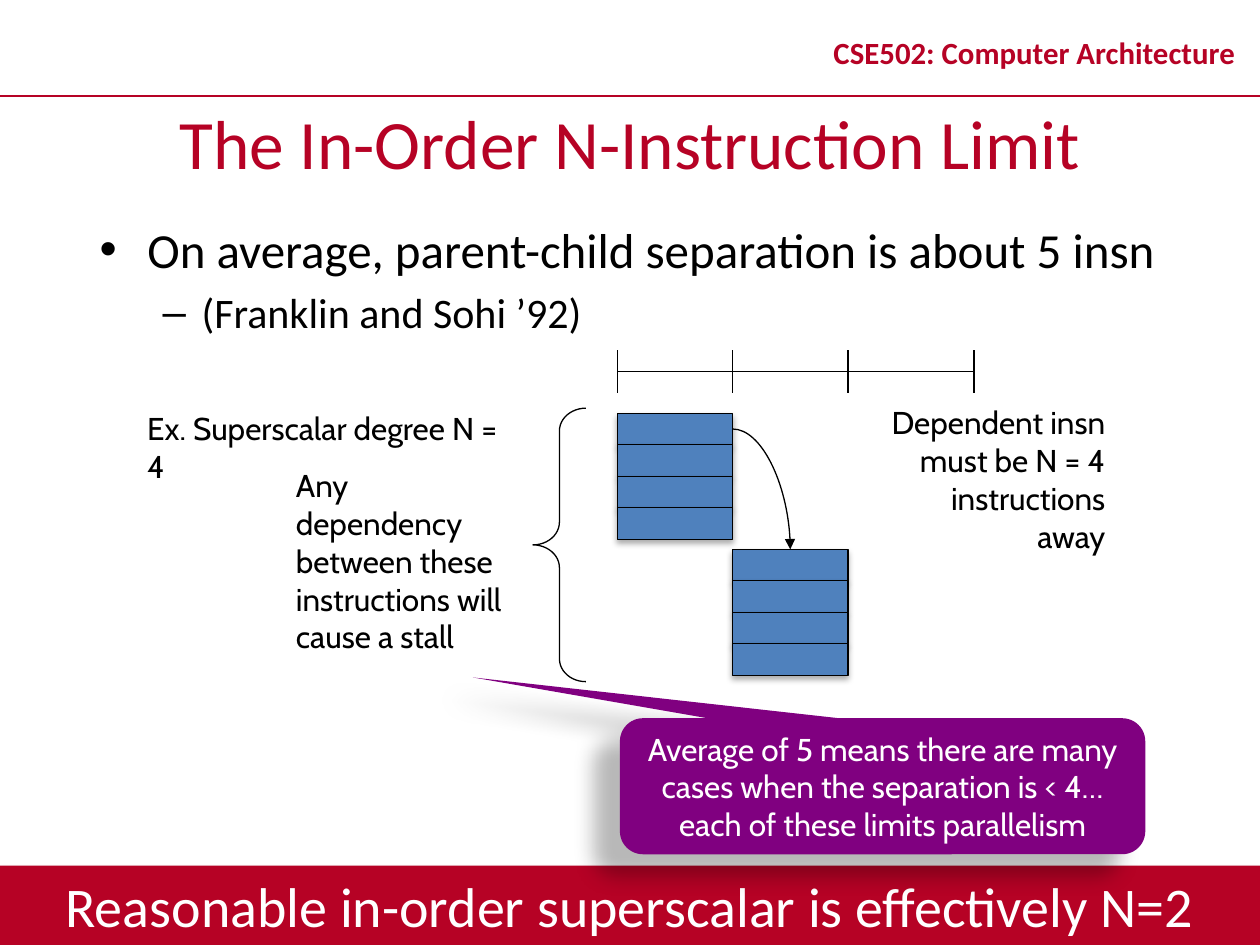
from lxml.etree import SubElement
from pptx import Presentation
from pptx.dml.color import RGBColor
from pptx.enum.shapes import MSO_CONNECTOR as CONN, MSO_SHAPE as SHAPE
from pptx.enum.text import MSO_ANCHOR as ANCHOR, MSO_AUTO_SIZE as AUTO, PP_ALIGN as ALIGN
from pptx.oxml.ns import qn
from pptx.util import Emu, Inches, Pt

# Theme
THEME = dict(
    red="B60225", black="000000", white="FFFFFF", blue="4F81BD", purple="800080",
    main="Calibri", note="Cabin",
    header=17.6, title=39.6, body=28, sub=24, footer=32, label=18, line=0.75,
)

# Content
HEADER = "CSE502: Computer Architecture"
TITLE = "The In-Order N-Instruction Limit"
# text, size, left margin, hanging indent, bullet, space before
BULLETS = [
    ("On average, parent-child separation is about 5 insn", "body", 0.38, 0.38, "•", 0),
    ("(Franklin and Sohi ’92)", "sub", 0.81, 0.31, "–", 5),
]
FOOTER = "Reasonable in-order superscalar is effectively N=2"
NOTES = [
    ((1.07, 3.2, 3.16, 0.4), ALIGN.LEFT, ["Ex. Superscalar degree N = 4"]),
    ((2.25, 3.65, 1.89, 1.31), ALIGN.LEFT,
     ["Any dependency", "between these", "instructions will", "cause a stall"]),
    ((6.9, 3.15, 1.97, 1.01), ALIGN.RIGHT,
     ["Dependent insn", "must be N = 4", "instructions away"]),
]
CALLOUT = ("Average of 5 means there are many cases when the separation is < 4… "
           "each of these limits parallelism")

# Layout
W, H = 10, 7.5
BAR = (0, 6.87, W, H - 6.87)
DEGREE = 4
LEFT, CELL_W, CELL_H = 4.9, 0.915, 0.25
GROUP_TOPS = [3.28, 4.36]
AXIS_Y, TICK = 2.95, 0.17
TICKS = [LEFT, LEFT + CELL_W, LEFT + 2 * CELL_W, 7.73]

prs = Presentation()
prs.slide_width, prs.slide_height = Inches(W), Inches(H)
s = prs.slides.add_slide(prs.slide_layouts[3])


def rgb(name):
    return RGBColor.from_string(THEME[name])


def place(sp, box):
    sp.left, sp.top, sp.width, sp.height = map(Inches, box)


def style(p, size, color, font="main", bold=None, align=None):
    p.alignment = align
    for r in p.runs:
        r.font.size, r.font.name, r.font.bold = Pt(THEME[size]), THEME[font], bold
        r.font.color.rgb = rgb(color)


def bullet(p, char=None, margin=0, hang=0):
    pPr = p._p.get_or_add_pPr()
    pPr.set("marL", str(Inches(margin)))
    pPr.set("indent", str(-Inches(hang)))
    if char:
        SubElement(pPr, qn("a:buChar"), char=char)
    else:
        SubElement(pPr, qn("a:buNone"))


def shadow(sp, alpha, blur, dist, angle):
    sp.shadow.inherit = False
    effects = sp._element.spPr.find(qn("a:effectLst"))
    outer = SubElement(effects, qn("a:outerShdw"), blurRad=str(Pt(blur)), dist=str(Pt(dist)),
                       dir=str(angle * 60000), rotWithShape="0")
    color = SubElement(outer, qn("a:srgbClr"), val=THEME["black"])
    SubElement(color, qn("a:alpha"), val=str(alpha * 1000))


def shape(kind, box, fill=None, line=None):
    sp = s.shapes.add_shape(kind, *map(Inches, box))
    sp.shadow.inherit = False
    if fill:
        sp.fill.solid()
        sp.fill.fore_color.rgb = rgb(fill)
    else:
        sp.fill.background()
    if line:
        sp.line.color.rgb, sp.line.width = rgb(line), Pt(THEME["line"])
    else:
        sp.line.fill.background()
    return sp


def connector(x1, y1, x2, y2, color="black", width=THEME["line"], kind=CONN.STRAIGHT):
    c = s.shapes.add_connector(kind, *map(Inches, (x1, y1, x2, y2)))
    c.line.color.rgb, c.line.width = rgb(color), Pt(width)
    SubElement(c._element.spPr, qn("a:effectLst"))
    return c


def text_box(box, lines, align, anchor=ANCHOR.TOP, **look):
    tf = s.shapes.add_textbox(*map(Inches, box)).text_frame
    tf.word_wrap, tf.vertical_anchor = True, anchor
    tf.text = "\n".join(lines)
    for p in tf.paragraphs:
        style(p, align=align, **look)
    return tf


# Frame: footer bar behind the placeholders, header rule and course name
bar = shape(SHAPE.RECTANGLE, BAR, "red")
shadow(bar, 35, 3.1, 1.8, 90)
s.shapes._spTree.insert(2, bar._element)
connector(0, 0.76, W, 0.76, "red", 1)
header = text_box((6.42, 0.13, 3.58, 0.63), [HEADER], ALIGN.CENTER, ANCHOR.MIDDLE,
                  size="header", color="red", bold=True)
header.paragraphs[0].line_spacing = 0.8

# Title, bullets and conclusion
title, body, footer = s.placeholders
for sp, box, anchor in [(title, (0.69, 0.74, 8.62, 0.77), ANCHOR.MIDDLE),
                        (body, (0.69, 1.69, 8.77, 1.3), ANCHOR.TOP),
                        (footer, BAR, ANCHOR.MIDDLE)]:
    place(sp, box)
    sp.text_frame.auto_size, sp.text_frame.vertical_anchor = AUTO.NONE, anchor

title.text_frame.text = TITLE
style(title.text_frame.paragraphs[0], "title", "red", align=ALIGN.CENTER)

body.text_frame.text = "\n".join(b[0] for b in BULLETS)
for level, (p, b) in enumerate(zip(body.text_frame.paragraphs, BULLETS)):
    _, size, margin, hang, char, before = b
    p.level, p.space_before = level, Pt(before)
    bullet(p, char, margin, hang)
    style(p, size, "black")

tf = footer.text_frame
tf.text = FOOTER
tf.margin_top = tf.margin_bottom = Emu(0)
p = tf.paragraphs[0]
p.level, p.space_before = 1, Pt(0)
bullet(p)
style(p, "footer", "white", align=ALIGN.CENTER)

# Instruction groups, one column per cycle
groups = []
for col, top in enumerate(GROUP_TOPS):
    cells = [shape(SHAPE.RECTANGLE, (LEFT + col * CELL_W, top + row * CELL_H, CELL_W, CELL_H),
                   "blue", "black") for row in range(DEGREE)]
    for cell in cells:
        shadow(cell, 32, 3.5, 2.2, 90)
    groups.append(cells)

# Cycle axis
connector(TICKS[0], AXIS_Y, TICKS[-1], AXIS_Y)
for x in TICKS:
    connector(x, AXIS_Y - TICK, x, AXIS_Y + TICK)

# Brace and dependency arrow
brace = shape(SHAPE.LEFT_BRACE, (4.23, 3.24, 0.42, 2.17), line="black")
brace.adjustments[0] = 0.43
arrow = connector(LEFT + CELL_W, GROUP_TOPS[0] + CELL_H / 2,
                  LEFT + 1.5 * CELL_W, GROUP_TOPS[1], kind=CONN.CURVE)
arrow.begin_connect(groups[0][0], 3)
arrow.end_connect(groups[1][0], 0)
arrow._element.spPr.find(qn("a:prstGeom")).set("prst", "curvedConnector2")
SubElement(arrow.line._get_or_add_ln(), qn("a:tailEnd"), type="triangle")

# Notes and callout
for box, align, lines in NOTES:
    text_box(box, lines, align, size="label", color="black", font="note")

callout = shape(SHAPE.ROUNDED_RECTANGULAR_CALLOUT, (4.92, 5.7, 4.17, 1.08), "purple")
for i, value in enumerate((-0.78, -0.8, 0.17)):
    callout.adjustments[i] = value
shadow(callout, 28, 11.8, 19.7, 141)
callout.text_frame.word_wrap = True
callout.text_frame.text = CALLOUT
style(callout.text_frame.paragraphs[0], "label", "white", "note", align=ALIGN.CENTER)

prs.save("out.pptx")
